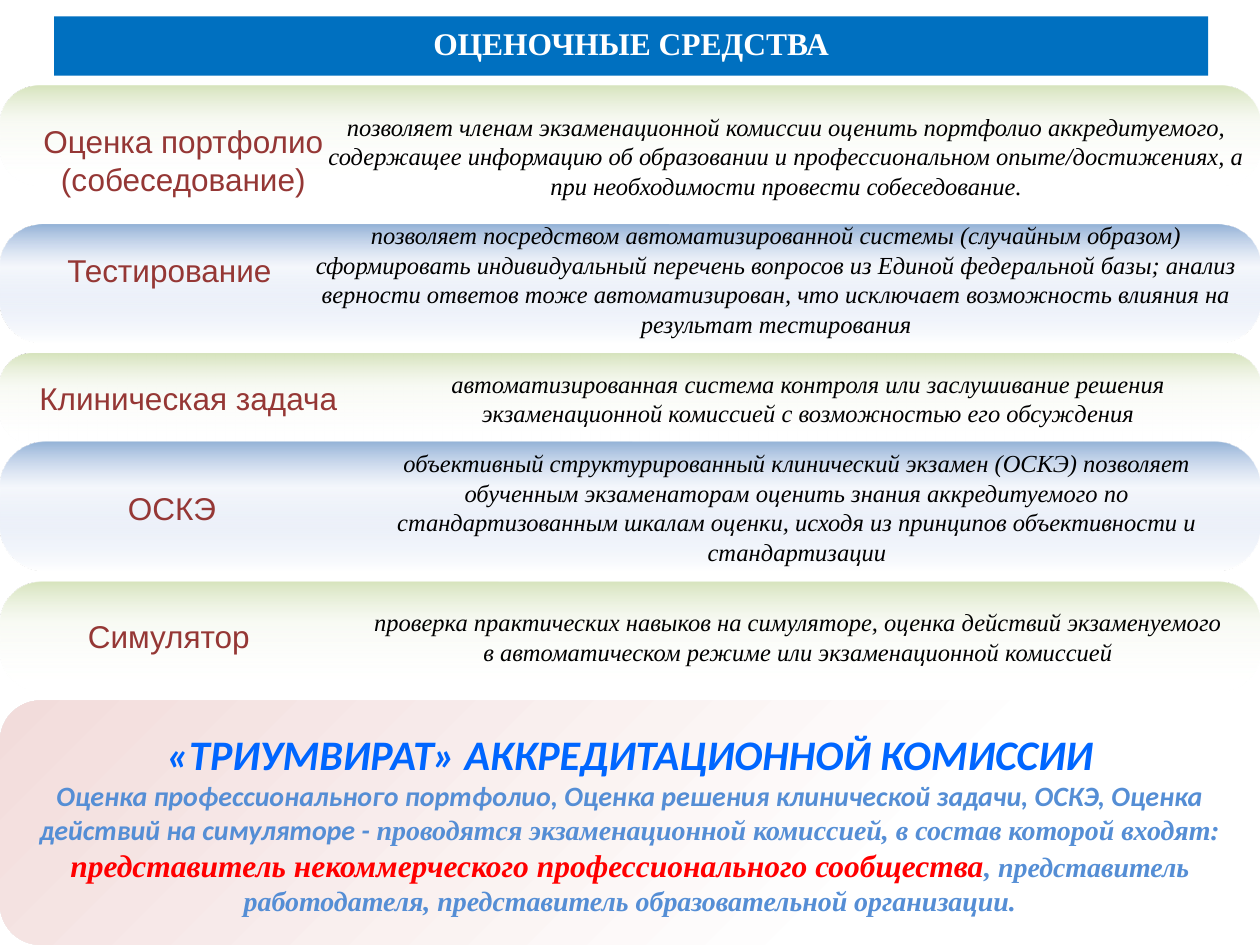
from lxml import etree
from pptx import Presentation, util as u
from pptx.dml.color import RGBColor
from pptx.enum import shapes, text
from pptx.oxml.ns import qn

W, H = 10, 7.5
SERIF, SANS, BODY = "Times New Roman", "Arial", "Calibri"
GREEN = [(0, "D7E4BD", 100), (36, "EBF1DE", 34), (100, "FFFFFF", 0)]
BLUE = [(0, "95B3D7", 100), (36, "C2D1ED", 15), (100, "FFFFFF", 100)]
PINK = [(0, "F2DCDB", 100), (71, "FFFFFF", 100), (100, "FFFFFF", 100)]

TITLE = "ОЦЕНОЧНЫЕ СРЕДСТВА"
# band top, height, corner; label left, top, width; note left, top, width, height
ROWS = [
    (["Оценка портфолио", "(собеседование)"],
     "позволяет членам экзаменационной комиссии оценить портфолио аккредитуемого, "
     "содержащее информацию об образовании и профессиональном опыте/достижениях, "
     "а при необходимости провести собеседование.",
     (0.68, 0.79, 0.39), (0.2, 0.92, 2.51), (2.48, 0.84, 7.52, 0.81)),
    (["Тестирование"],
     "позволяет посредством автоматизированной системы (случайным образом) "
     "сформировать индивидуальный перечень вопросов из Единой федеральной базы; "
     "анализ верности ответов тоже автоматизирован, что исключает возможность "
     "влияния на результат тестирования",
     (1.78, 0.94, 0.36), (0.43, 1.94, 1.83), (2.32, 1.7, 7.68, 1.04)),
    (["Клиническая задача"],
     "автоматизированная система контроля или заслушивание решения "
     "экзаменационной комиссией с возможностью его обсуждения",
     (2.81, 0.71, 0.36), (0.2, 2.96, 2.59), (2.83, 2.88, 7.17, 0.57)),
    (["ОСКЭ"],
     "объективный структурированный клинический экзамен (ОСКЭ) позволяет "
     "обученным экзаменаторам оценить знания аккредитуемого по стандартизованным "
     "шкалам оценки, исходя из принципов объективности и стандартизации",
     (3.51, 1.02, 0.36), (0.91, 3.83, 0.91), (2.8, 3.51, 7.05, 1.04)),
    (["Симулятор"],
     "проверка практических навыков на симуляторе, оценка действий экзаменуемого "
     "в автоматическом режиме или экзаменационной комиссией",
     (4.62, 0.87, 0.39), (0.59, 4.85, 1.5), (2.87, 4.77, 6.93, 0.57)),
]
PANEL = [
    [("«ТРИУМВИРАТ» АККРЕДИТАЦИОННОЙ КОМИССИИ", 24, BODY, "0066FF")],
    [("Оценка профессионального портфолио, Оценка решения клинической задачи, "
      "ОСКЭ, Оценка действий на симуляторе - ", 16, BODY, "558ED5"),
     ("проводятся экзаменационной комиссией, в состав которой входят: ",
      16, SERIF, "558ED5"),
     ("представитель некоммерческого профессионального сообщества",
      18, SERIF, "FF0000"),
     (", представитель работодателя, представитель образовательной организации.",
      16, SERIF, "558ED5")],
]


def color(code):
    return RGBColor.from_string(code)


def write(shape, paras, bold=False, italic=False, wrap=True):
    frame = shape.text_frame
    frame.word_wrap = wrap
    for i, runs in enumerate(paras):
        para = frame.paragraphs[0] if i == 0 else frame.add_paragraph()
        para.alignment = text.PP_ALIGN.CENTER
        for words, size, face, code in runs:
            run = para.add_run()
            run.text = words
            font = run.font
            font.size, font.name = u.Pt(size), face
            font.bold, font.italic = bold, italic
            font.color.rgb = color(code)
    return frame


def box(kind, *place):
    shape = slide.shapes.add_shape(kind, *map(u.Inches, place))
    shape.shadow.inherit = False
    shape.line.fill.background()
    return shape


def note(place, paras, **look):
    shape = slide.shapes.add_textbox(*map(u.Inches, place))
    write(shape, paras, **look)


def blend(shape, stops, radial=False):
    shape.fill.gradient()
    grad = shape.element.spPr.find(qn("a:gradFill"))
    for child in list(grad):
        grad.remove(child)

    def add(up, tag, **attrs):
        return etree.SubElement(up, qn(tag), {k: str(v) for k, v in attrs.items()})

    marks = add(grad, "a:gsLst")
    for pos, code, alpha in stops:
        tint = add(add(marks, "a:gs", pos=pos * 1000), "a:srgbClr", val=code)
        if alpha < 100:
            add(tint, "a:alpha", val=alpha * 1000)
    if radial:
        add(add(grad, "a:path", path="circle"), "a:fillToRect", r=100000, b=100000)
    else:
        add(grad, "a:lin", ang=90 * 60000, scaled=0)


deck = Presentation()
deck.slide_width, deck.slide_height = u.Inches(W), u.Inches(H)
slide = deck.slides.add_slide(deck.slide_layouts[6])
ROUND = shapes.MSO_SHAPE.ROUNDED_RECTANGLE

for i, (_, _, (top, high, bend), _, _) in enumerate(ROWS):
    band = box(ROUND, 0, top, W, high)
    band.adjustments[0] = bend
    blend(band, BLUE if i % 2 else GREEN)

head = box(shapes.MSO_SHAPE.RECTANGLE, 0.43, 0.13, 9.16, 0.47)
head.fill.solid()
head.fill.fore_color.rgb = color("0070C0")
frame = write(head, [[(TITLE, 18, SERIF, "FFFFFF")]], bold=True)
frame.vertical_anchor = text.MSO_ANCHOR.MIDDLE
frame.paragraphs[0].line_spacing = 0.8

for label, words, _, (left, top, wide), place in ROWS:
    note((left, top, wide, 0.1 + 0.3 * len(label)),
         [[(line, 18, SANS, "953735")] for line in label], wrap=False)
    note(place, [[(words, 14, SERIF, "000000")]], italic=True)

panel = box(ROUND, 0, 5.56, W, H - 5.56)
blend(panel, PINK, radial=True)
write(panel, PANEL, bold=True, italic=True).vertical_anchor = text.MSO_ANCHOR.MIDDLE

deck.save("out.pptx")
